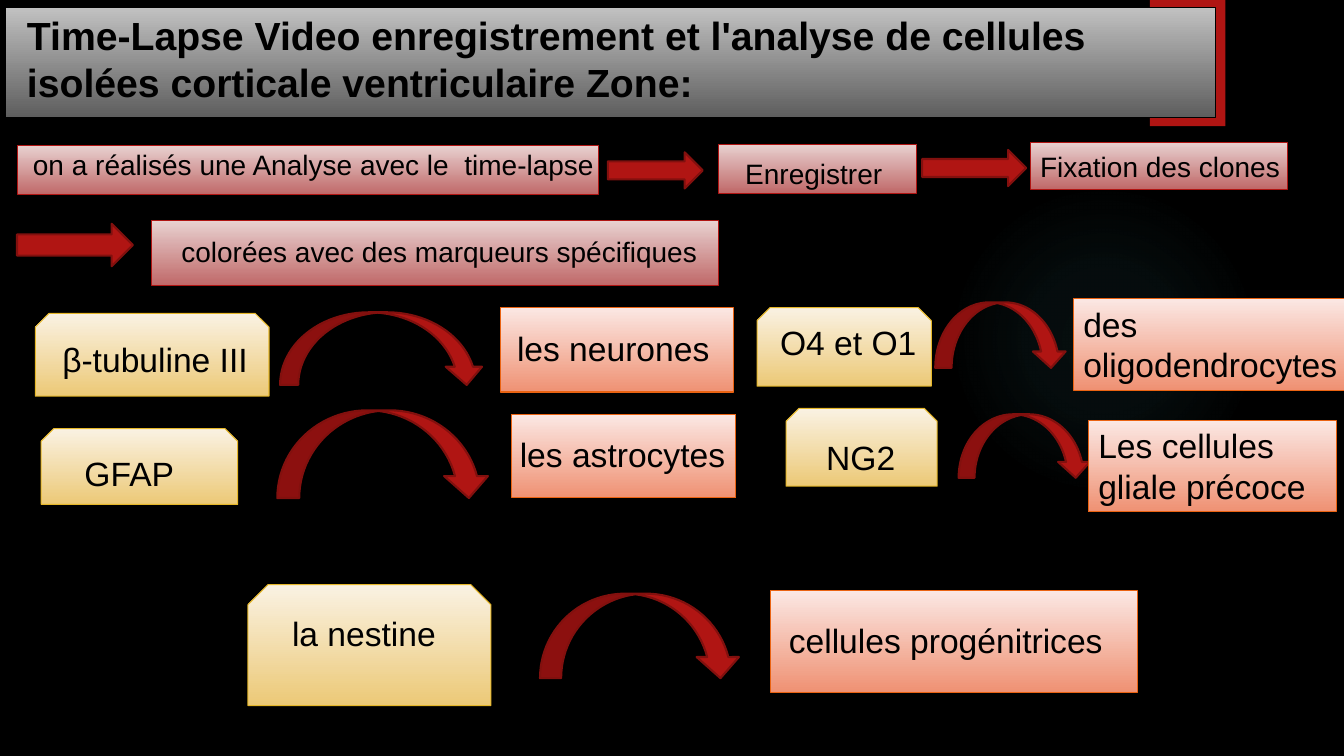
from lxml import etree
from pptx import Presentation
from pptx import util as u
from pptx.dml import color
from pptx.enum import shapes, text
from pptx.oxml import ns

TITLE = ("Time-Lapse Video enregistrement et l'analyse de cellules "
         "isolées corticale ventriculaire Zone:")

# Panel styles: preset, gradient top, gradient bottom, line, text size
STYLES = {
    "step": (shapes.MSO_SHAPE.RECTANGLE, "E8D1D0", "C06969", "B01513", 20),
    "marker": (shapes.MSO_SHAPE.SNIP_2_SAME_RECTANGLE, "FAF2E3", "ECC977", "E6B729", 24),
    "cell": (shapes.MSO_SHAPE.RECTANGLE, "FBE8E4", "EF9173", "EA6312", 24),
}

# Style, text, frame (left, top, width, height), text offset (x, y), all in cm
PANELS = [
    ("step", "on a réalisés une Analyse avec le  time-lapse", (0.43, 3.66, 14.66, 1.24), (0.4, 0.05)),
    ("step", "Enregistrer", (18.11, 3.63, 5, 1.24), (0.67, 0.31)),
    ("step", "Fixation des clones", (25.96, 3.58, 6.48, 1.19), (0.25, 0.18)),
    ("step", "colorées avec des marqueurs spécifiques", (3.81, 5.56, 14.3, 1.63), (0.76, 0.34)),
    ("marker", "β-tubuline III", (0.89, 7.9, 5.89, 2.08), (0.68, 0.64)),
    ("cell", "les neurones", (12.62, 7.75, 5.87, 2.13), (0.41, 0.51)),
    ("marker", "O4 et O1", (19.08, 7.75, 4.39, 1.98), (0.58, 0.36)),
    ("cell", "des oligodendrocytes", (27.05, 7.52, 6.93, 2.31), (0.25, 0.13)),
    ("marker", "GFAP", (1.04, 10.8, 4.95, 1.91), (1.09, 0.61)),
    ("cell", "les astrocytes", (12.9, 10.44, 5.64, 2.11), (0.2, 0.49)),
    ("marker", "NG2", (19.81, 10.29, 3.81, 1.96), (1.01, 0.71)),
    ("cell", "Les cellules gliale précoce", (27.43, 10.59, 6.25, 2.31), (0.25, 0.13)),
    ("marker", "la nestine", (6.25, 14.73, 6.12, 3.05), (1.11, 0.72)),
    ("cell", "cellules progénitrices", (19.41, 14.88, 9.25, 2.57), (0.47, 0.74)),
]

STEP_ARROWS = [
    (15.32, 3.84, 2.39, 0.91),
    (23.24, 3.78, 2.62, 0.91),
    (0.43, 5.64, 2.92, 1.07),
]
MARKER_ARROWS = [
    (7.06, 7.87, 5.16, 1.83),
    (23.57, 7.62, 3.33, 1.65),
    (6.99, 10.34, 5.38, 2.21),
    (24.16, 10.44, 3.35, 1.6),
    (13.61, 14.96, 5.08, 2.13),
]
GLOW_STOPS = [(0, 7), (36, 6), (69, 0)]  # position, opacity in percent
SNIP_INSET = 1 / 12  # text inset of a snipped panel, as a share of its height


def rgb(value):
    return color.RGBColor.from_string(value)


def add_plain(preset, frame):
    shape = slide.shapes.add_shape(preset, *map(u.Cm, frame))
    shape.shadow.inherit = False
    shape.line.fill.background()
    return shape


def set_line(shape, value, width):
    shape.line.color.rgb = rgb(value)
    shape.line.width = u.Pt(width)


def set_gradient(shape, top, bottom):
    shape.fill.gradient()
    shape.fill.gradient_angle = 270
    for stop, value in zip(shape.fill.gradient_stops, (top, bottom)):
        stop.color.rgb = rgb(value)


def set_text(shape, words, size, left, top, bold=False):
    frame = shape.text_frame
    frame.text = words
    frame.word_wrap = True
    frame.auto_size = text.MSO_AUTO_SIZE.NONE
    frame.vertical_anchor = text.MSO_ANCHOR.TOP
    frame.margin_left, frame.margin_top = u.Cm(left), u.Cm(top)
    frame.margin_right = frame.margin_bottom = 0
    para = frame.paragraphs[0]
    para.alignment = text.PP_ALIGN.LEFT
    font = para.runs[0].font
    font.name, font.size, font.bold = "Arial", u.Pt(size), bold
    font.color.rgb = rgb("000000")


def add_glow(frame):
    glow = add_plain(shapes.MSO_SHAPE.OVAL, frame)
    glow.fill.gradient()
    gradient = glow.element.spPr.find(ns.qn("a:gradFill"))
    for child in list(gradient):
        gradient.remove(child)
    stops = etree.SubElement(gradient, ns.qn("a:gsLst"))
    for position, opacity in GLOW_STOPS:
        stop = etree.SubElement(stops, ns.qn("a:gs"), pos=str(position * 1000))
        tint = etree.SubElement(stop, ns.qn("a:srgbClr"), val="50B9C1")
        etree.SubElement(tint, ns.qn("a:alpha"), val=str(opacity * 1000))
    circle = etree.SubElement(gradient, ns.qn("a:path"), path="circle")
    etree.SubElement(circle, ns.qn("a:fillToRect"), l="50000", t="50000", r="50000", b="50000")


deck = Presentation()
deck.slide_width, deck.slide_height = u.Cm(33.87), u.Cm(19.05)
slide = deck.slides.add_slide(deck.slide_layouts[5])

# Backdrop
slide.background.fill.solid()
slide.background.fill.fore_color.rgb = rgb("000000")
add_glow((23.9, 4.65, 7.82, 7.82))
tab = add_plain(shapes.MSO_SHAPE.RECTANGLE, (28.98, 0, 1.9, 3.18))
tab.fill.solid()
tab.fill.fore_color.rgb = rgb("B01513")

# Title bar, brought in front of the red tab
title = slide.shapes.title
title.left, title.top, title.width, title.height = map(u.Cm, (0.15, 0.18, 30.48, 2.77))
set_gradient(title, "C1C1C1", "5E5E5E")
set_line(title, "000000", 0.75)
set_text(title, TITLE, 28, 0.53, 0.1, bold=True)
title.element.getparent().append(title.element)

# Arrows
for preset, frames in ((shapes.MSO_SHAPE.RIGHT_ARROW, STEP_ARROWS),
                       (shapes.MSO_SHAPE.CURVED_DOWN_ARROW, MARKER_ARROWS)):
    for frame in frames:
        arrow = add_plain(preset, frame)
        arrow.fill.solid()
        arrow.fill.fore_color.rgb = rgb("B01513")
        set_line(arrow, "82100E", 1.5)

# Steps, markers and cell types
for style, words, frame, (left, top) in PANELS:
    preset, light, dark, edge, size = STYLES[style]
    panel = add_plain(preset, frame)
    set_gradient(panel, light, dark)
    set_line(panel, edge, 0.75)
    inset = frame[3] * SNIP_INSET if style == "marker" else 0
    set_text(panel, words, size, left - inset, top - inset)

deck.save("out.pptx")
